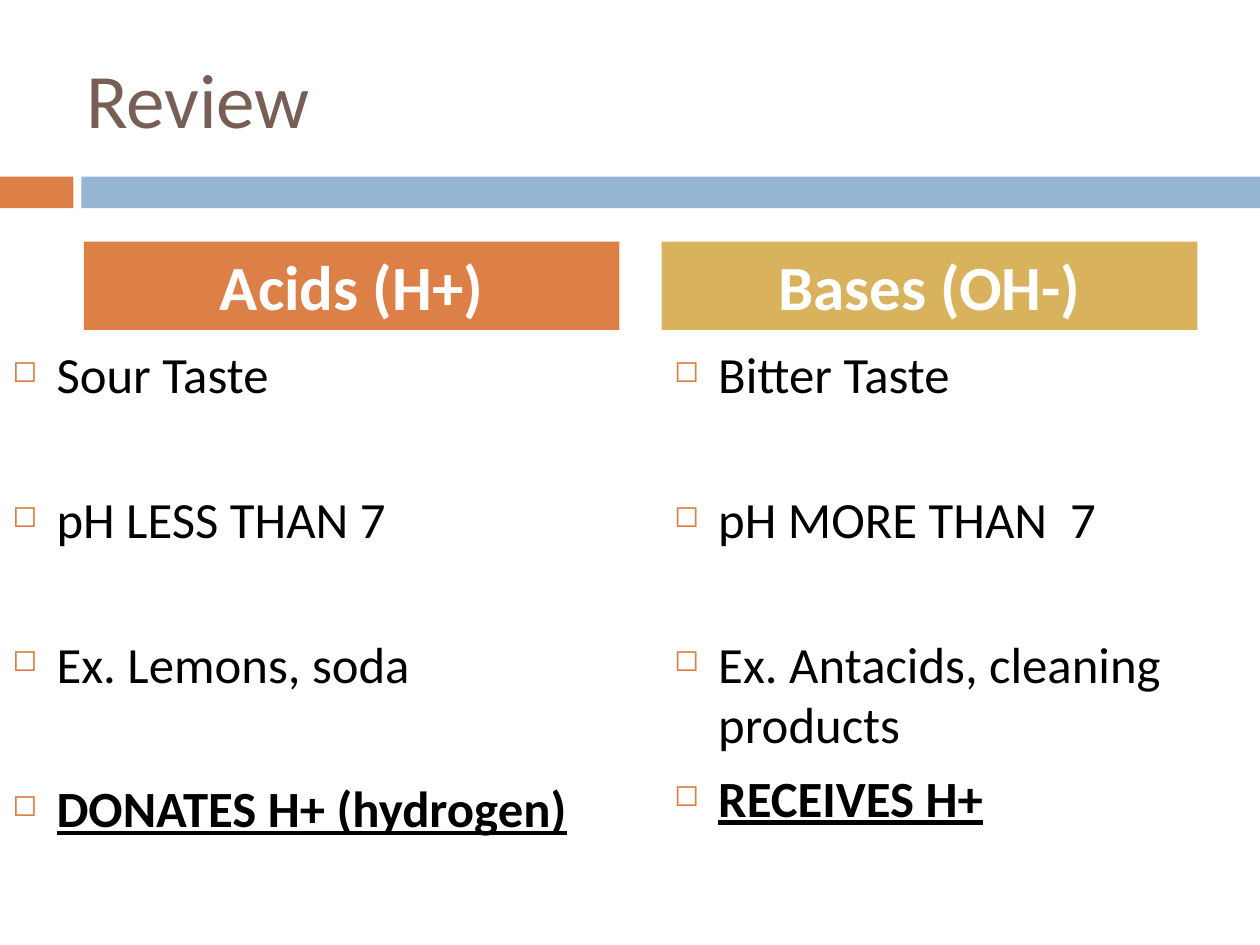
from lxml.etree import SubElement
from pptx import Presentation
from pptx.dml.color import RGBColor
from pptx.enum.shapes import MSO_SHAPE
from pptx.enum.text import MSO_ANCHOR, MSO_AUTO_SIZE, PP_ALIGN
from pptx.oxml.ns import qn
from pptx.util import Cm, Pt

COLORS = {"title": "775F55", "orange": "DD8047", "blue": "94B6D2",
          "gold": "D8B25C", "white": "FFFFFF", "black": "000000"}
FONT = "Calibri"
TITLE = "Review"
GAP, TIGHT = 48, 7  # points before a bullet

# heading, colour, heading left, list left, list width, bullets (text, space before, key point)
COLUMNS = [
    ("Acids (H+)", "orange", 1.69, 0, 12.5, [
        ("Sour Taste", 0, False),
        ("pH LESS THAN 7", GAP, False),
        ("Ex. Lemons, soda", GAP, False),
        ("DONATES H+ (hydrogen)", GAP, True)]),
    ("Bases (OH-)", "gold", 13.34, 13.34, 12.06, [
        ("Bitter Taste", 0, False),
        ("pH MORE THAN  7", GAP, False),
        ("Ex. Antacids, cleaning products", GAP, False),
        ("RECEIVES H+", TIGHT, True)]),
]
BANDS = [("orange", 0, 1.48), ("blue", 1.64, 23.76)]  # colour, left, width


def rgb(name):
    return RGBColor.from_string(COLORS[name])


def add_text(p, text, color, **font):
    r = p.add_run()
    r.text = text
    r.font.color.rgb = rgb(color)
    for key, value in {"name": FONT, **font}.items():
        setattr(r.font, key, value)


def add_block(s, color, left, top, width, height):
    sp = s.shapes.add_shape(MSO_SHAPE.RECTANGLE, Cm(left), Cm(top), Cm(width), Cm(height))
    sp.shadow.inherit = False
    sp.fill.solid()
    sp.fill.fore_color.rgb = rgb(color)
    sp.line.fill.background()
    return sp


def set_bullet(p):
    """Give the paragraph a hanging orange square."""
    pPr = p._p.get_or_add_pPr()
    pPr.set("marL", str(Cm(0.89)))
    pPr.set("indent", str(-Cm(0.89)))
    color = SubElement(pPr, qn("a:buClr"))
    SubElement(color, qn("a:srgbClr"), val=COLORS["orange"])
    SubElement(pPr, qn("a:buSzPct"), val="60000")
    SubElement(pPr, qn("a:buChar"), char="◻")


def add_title(s):
    sp = s.shapes.title
    sp.left, sp.top, sp.width, sp.height = Cm(1.48), Cm(0.76), Cm(22.65), Cm(2.41)
    tf = sp.text_frame
    tf.vertical_anchor = MSO_ANCHOR.MIDDLE
    tf.auto_size = MSO_AUTO_SIZE.NONE
    p = tf.paragraphs[0]
    p.alignment = PP_ALIGN.LEFT
    add_text(p, TITLE, "title", size=Pt(44))


def add_list(s, left, width, bullets):
    tf = s.shapes.add_textbox(Cm(left), Cm(6.78), Cm(width), Cm(12.27)).text_frame
    tf.word_wrap = True
    for i, (text, before, key) in enumerate(bullets):
        p = tf.add_paragraph() if i else tf.paragraphs[0]
        p.space_before = Pt(before)
        set_bullet(p)
        add_text(p, text, "black", size=Pt(29), bold=key, underline=key)


def add_heading(s, text, color, left):
    tf = add_block(s, color, left, 4.87, 10.8, 1.78).text_frame
    tf.vertical_anchor = MSO_ANCHOR.MIDDLE
    p = tf.paragraphs[0]
    p.alignment = PP_ALIGN.CENTER
    add_text(p, text, "white", size=Pt(36), bold=True)


def main():
    prs = Presentation()
    prs.slide_width, prs.slide_height = Cm(25.4), Cm(19.05)
    s = prs.slides.add_slide(prs.slide_layouts[5])
    for color, left, width in BANDS:
        add_block(s, color, left, 3.56, width, 0.64)
    add_title(s)
    for heading, color, left, list_left, list_width, bullets in COLUMNS:
        add_list(s, list_left, list_width, bullets)
        add_heading(s, heading, color, left)
    prs.save("out.pptx")


if __name__ == "__main__":
    main()
